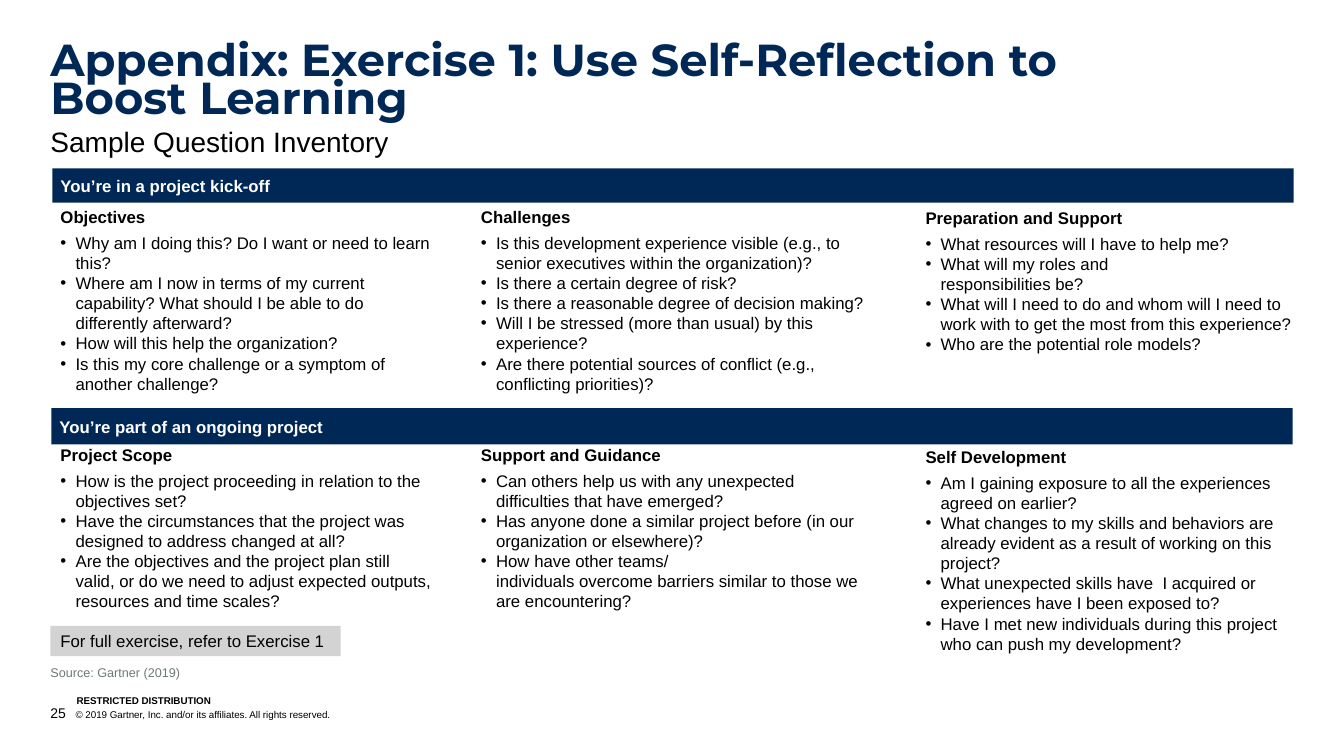
"""Build the self-reflection question inventory slide."""
from copy import deepcopy

from lxml import etree
from pptx import Presentation
from pptx.dml.color import RGBColor
from pptx.enum.shapes import MSO_SHAPE
from pptx.enum.text import MSO_ANCHOR, PP_ALIGN
from pptx.oxml.ns import qn
from pptx.util import Pt

PX = 9144
HANG = 15
NAVY, BLACK, WHITE = "002856", "000000", "FFFFFF"
GREY, SLATE = "D3D3D3", "6F7878"
TOP, MID, LOW = MSO_ANCHOR.TOP, MSO_ANCHOR.MIDDLE, MSO_ANCHOR.BOTTOM
LEFT = PP_ALIGN.LEFT
RECT = MSO_SHAPE.RECTANGLE


def paint(fill, tone):
    fill.solid()
    fill.fore_color.rgb = RGBColor.from_string(tone)


def write(shape, head, points=(), size=12, tone=BLACK, bold=False, face="Arial",
          pad=(0, 0, 0, 0), anchor=TOP, line=None, after=0):
    frame = shape.text_frame
    frame.word_wrap = True
    frame.vertical_anchor = anchor
    (frame.margin_left, frame.margin_top,
     frame.margin_right, frame.margin_bottom) = [n * PX for n in pad]
    for i, text in enumerate([head, *points]):
        para = frame.add_paragraph() if i else frame.paragraphs[0]
        para.text = text
        para.alignment = LEFT
        para.space_after = Pt(0 if i else after)
        if line:
            para.line_spacing = line
        if i:
            props = para._p.get_or_add_pPr()
            props.set("marL", str(HANG * PX))
            props.set("indent", str(-HANG * PX))
            etree.SubElement(props, qn("a:buFont")).set("typeface", "Arial")
            etree.SubElement(props, qn("a:buChar")).set("char", "•")
        for run in para.runs:
            run.font.name = face
            run.font.size = Pt(size)
            run.font.bold = bold and not i
            paint(run.font.fill, tone)
        for brk in para._p.findall(qn("a:br")):
            brk.append(deepcopy(para.runs[0]._r.rPr))


deck = Presentation()
deck.slide_width, deck.slide_height = 1333 * PX, 750 * PX
slide = deck.slides.add_slide(deck.slide_layouts[5])
shapes = slide.shapes

title = shapes.title
title.left, title.top, title.width, title.height = [n * PX for n in (50, 46, 1235, 78)]
write(title, "Appendix: Exercise 1: Use Self-Reflection to\nBoost Learning", size=32,
      tone=NAVY, bold=True, face="Montserrat", line=0.7, after=12)

bars = [
    ((52, 167, 1231, 34), NAVY, "You’re in a project kick-off",
     dict(tone=WHITE, bold=True, pad=(8, 8, 8, 8))),
    ((51, 405, 1231, 36), NAVY, "You’re part of an ongoing project",
     dict(tone=WHITE, bold=True, pad=(8, 8, 8, 8))),
    ((50, 621, 288, 30), GREY, "For full exercise, refer to Exercise 1",
     dict(pad=(10, 5, 10, 5))),
]
for place, back, text, form in bars:
    bar = shapes.add_shape(RECT, *[n * PX for n in place])
    bar.shadow.inherit = False
    paint(bar.fill, back)
    bar.line.fill.background()
    write(bar, text, anchor=MID, **form)

lists = [
    ((60, 205, 370, 190), "Objectives", [
        "Why am I doing this? Do I want or need to learn this?",
        "Where am I now in terms of my current capability? "
        "What should I be able to do differently afterward?",
        "How will this help the organization?",
        "Is this my core challenge or a symptom of another challenge?"]),
    ((477, 205, 382, 187), "Challenges", [
        "Is this development experience visible (e.g., to senior executives "
        "within the organization)?",
        "Is there a certain degree of risk?",
        "Is there a reasonable degree of decision making?",
        "Will I be stressed (more than usual) by this experience?",
        "Are there potential sources of conflict (e.g., conflicting priorities)?"]),
    ((918, 206, 366, 150), "Preparation and Support", [
        "What resources will I have to help me?",
        "What will my roles and\nresponsibilities be?",
        "What will I need to do and whom will I need to work with "
        "to get the most from this experience?",
        "Who are the potential role models?"]),
    ((60, 441, 370, 170), "Project Scope", [
        "How is the project proceeding in relation to the objectives set?",
        "Have the circumstances that the project was designed to address "
        "changed at all?",
        "Are the objectives and the project plan still valid, or do we need to "
        "adjust expected outputs, resources and time scales?"]),
    ((477, 441, 382, 170), "Support and Guidance", [
        "Can others help us with any unexpected difficulties that have emerged?",
        "Has anyone done a similar project before (in our\n"
        "organization or elsewhere)?",
        "How have other teams/\nindividuals overcome barriers similar to those "
        "we are encountering?"]),
    ((918, 443, 366, 210), "Self Development", [
        "Am I gaining exposure to all the experiences agreed on earlier?",
        "What changes to my skills and behaviors are already evident "
        "as a result of working on this project?",
        "What unexpected skills have  I acquired or experiences "
        "have I been exposed to?",
        "Have I met new individuals during this project who can push "
        "my development?"]),
]
for place, head, points in lists:
    box = shapes.add_textbox(*[n * PX for n in place])
    write(box, head, points, bold=True, after=4)

notes = [
    ((50, 122, 1233, 40), "Sample Question Inventory",
     dict(size=20, pad=(0, 5, 10, 5), line=0.9, after=12)),
    ((50, 655, 1015, 25), "Source: Gartner (2019)",
     dict(size=9, tone=SLATE, pad=(0, 5, 10, 5))),
    ((76, 689, 253, 12), "RESTRICTED DISTRIBUTION",
     dict(size=7, bold=True, anchor=LOW)),
    ((50, 699, 799, 17), "25", dict(size=10, anchor=LOW)),
]
for place, text, form in notes:
    box = shapes.add_textbox(*[n * PX for n in place])
    write(box, text, **form)

foot = box.text_frame.paragraphs[0]
tabs = etree.SubElement(foot._p.get_or_add_pPr(), qn("a:tabLst"))
etree.SubElement(tabs, qn("a:tab"), pos=str(25 * PX), algn="l")
legal = foot.add_run()
legal.text = "\t© 2019 Gartner, Inc. and/or its affiliates. All rights reserved."
legal.font.name = "Arial"
legal.font.size = Pt(7)
paint(legal.font.fill, BLACK)

deck.save("out.pptx")
